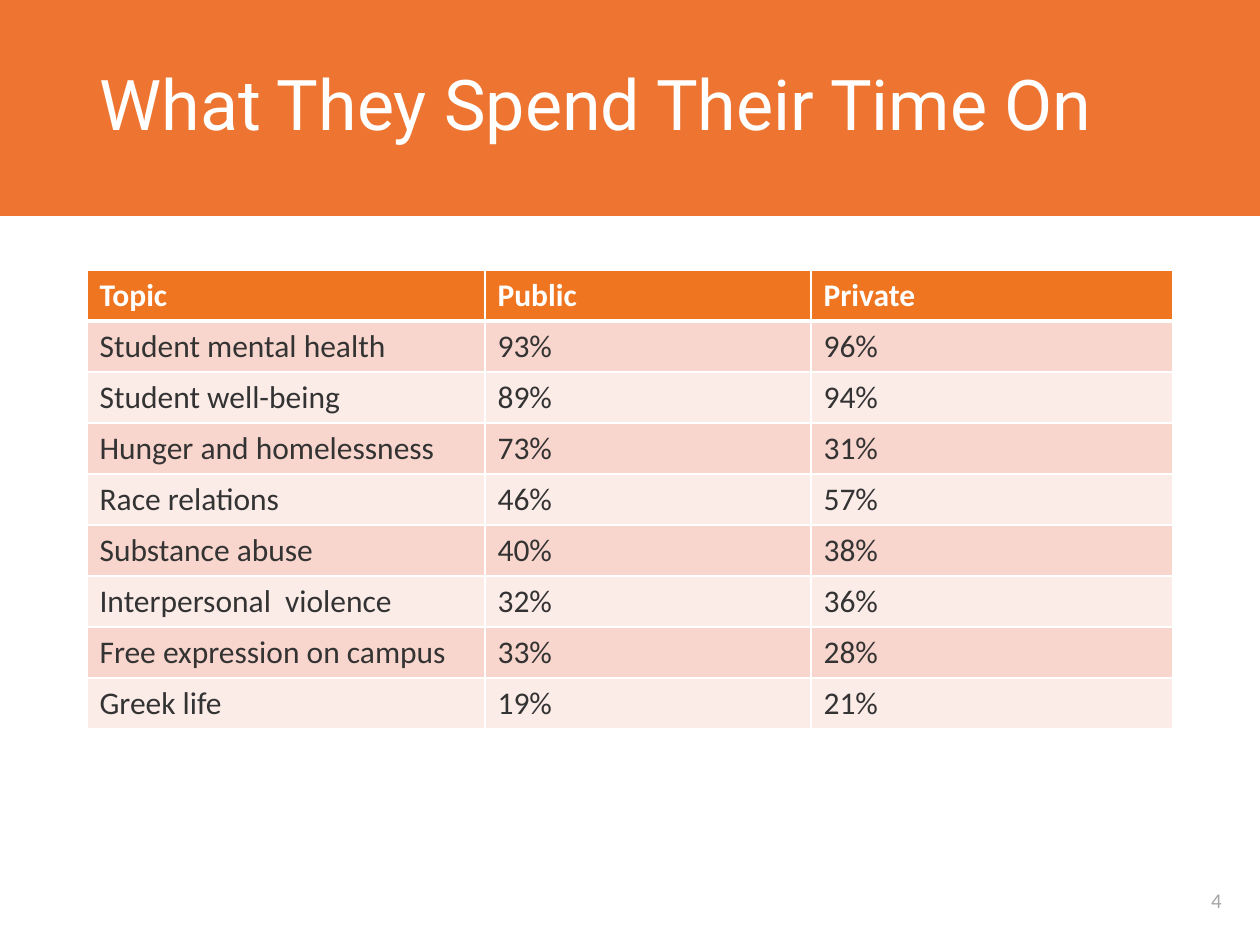
from lxml.etree import SubElement
from pptx import Presentation
from pptx.dml.color import RGBColor
from pptx.enum.shapes import MSO_SHAPE
from pptx.enum.text import MSO_ANCHOR, MSO_AUTO_SIZE, PP_ALIGN
from pptx.oxml.ns import qn
from pptx.util import Pt

# Content
TITLE = "What They Spend Their Time On"
PAGE_NUMBER = "4"
HEADER = ("Topic", "Public", "Private")
TOPICS = [
    ("Student mental health", "93%", "96%"),
    ("Student well-being", "89%", "94%"),
    ("Hunger and homelessness", "73%", "31%"),
    ("Race relations", "46%", "57%"),
    ("Substance abuse", "40%", "38%"),
    ("Interpersonal  violence", "32%", "36%"),
    ("Free expression on campus", "33%", "28%"),
    ("Greek life", "19%", "21%"),
]

# Theme: colours and type
THEME = {
    "band": "EE7531",
    "header_fill": "EF7521",
    "row_fills": ("F9D6CD", "FCECE8"),
    "border": "FFFFFF",
    "title": {"name": "Roboto", "size": 40, "color": "FFFFFF", "bold": False},
    "header": {"name": "Calibri", "size": 18, "color": "FFFFFF", "bold": True},
    "body": {"name": "Calibri", "size": 18, "color": "333333", "bold": False},
    "number": {"name": "Calibri", "size": 12, "color": "A6A6A6", "bold": False},
}

# Layout in px
SCALE = 914400 / 126
PAGE = (1260, 945)
BAND = (-1, 0, 1262, 216)
TITLE_BOX = (87, 0, 1086, 216)
NUMBER_BOX = (1173, 876, 87, 49)
TABLE_LEFT, TABLE_TOP = 87, 270
COLUMN_WIDTHS = (398, 326, 362)
ROW_HEIGHT = 51


def px(value):
    return round(value * SCALE)


def place(shape, bounds):
    for name, value in zip(("left", "top", "width", "height"), bounds):
        setattr(shape, name, px(value))


def write(frame, text, style):
    para = frame.paragraphs[0]
    span = para.add_run()
    span.text = text
    formats = {"name": style["name"], "size": Pt(style["size"]), "bold": style["bold"]}
    for name, value in formats.items():
        setattr(span.font, name, value)
    span.font.color.rgb = RGBColor.from_string(style["color"])
    return para


def fill_solid(target, color):
    target.fill.solid()
    target.fill.fore_color.rgb = RGBColor.from_string(color)


def set_borders(cell, widths):
    properties = cell._tc.get_or_add_tcPr()
    for position, (side, width) in enumerate(widths.items()):
        line = SubElement(properties, qn(f"a:{side}"), w=str(Pt(width)))
        solid = SubElement(line, qn("a:solidFill"))
        SubElement(solid, qn("a:srgbClr"), val=THEME["border"])
        properties.insert(position, line)  # borders come before the fill


def add_title(page):
    band = page.shapes.add_shape(MSO_SHAPE.RECTANGLE, *map(px, BAND))
    band.shadow.inherit = False
    fill_solid(band, THEME["band"])
    band.line.fill.background()

    title = page.shapes.title
    place(title, TITLE_BOX)
    band._element.addnext(title._element)  # title sits in front of the band
    frame = title.text_frame
    frame.word_wrap = True
    frame.auto_size = MSO_AUTO_SIZE.NONE
    frame.vertical_anchor = MSO_ANCHOR.MIDDLE
    para = write(frame, TITLE, THEME["title"])
    para.alignment = PP_ALIGN.LEFT
    para.line_spacing = 0.9


def add_page_number(page):
    box = page.shapes.add_textbox(*map(px, NUMBER_BOX))
    box.text_frame.word_wrap = True
    box.text_frame.vertical_anchor = MSO_ANCHOR.MIDDLE
    write(box.text_frame, PAGE_NUMBER, THEME["number"]).alignment = PP_ALIGN.CENTER


def add_topic_table(page):
    rows = [HEADER, *TOPICS]
    bounds = (TABLE_LEFT, TABLE_TOP, sum(COLUMN_WIDTHS), ROW_HEIGHT * len(rows))
    table = page.shapes.add_table(len(rows), len(HEADER), *map(px, bounds)).table
    for column, width in zip(table.columns, COLUMN_WIDTHS):
        column.width = px(width)
    for index, values in enumerate(rows):
        table.rows[index].height = px(ROW_HEIGHT)
        is_header = index == 0
        fill = THEME["header_fill"] if is_header else THEME["row_fills"][(index - 1) % 2]
        style = THEME["header" if is_header else "body"]
        # A thick rule parts the header from the rows
        borders = {"lnL": 1, "lnR": 1, "lnT": 3 if index == 1 else 1,
                   "lnB": 3 if is_header else 1}
        for column, value in enumerate(values):
            cell = table.cell(index, column)
            write(cell.text_frame, value, style)
            fill_solid(cell, fill)
            set_borders(cell, borders)


def main():
    deck = Presentation()
    deck.slide_width, deck.slide_height = map(px, PAGE)
    page = deck.slides.add_slide(deck.slide_layouts[5])
    add_title(page)
    add_page_number(page)
    add_topic_table(page)
    deck.save("out.pptx")


if __name__ == "__main__":
    main()
